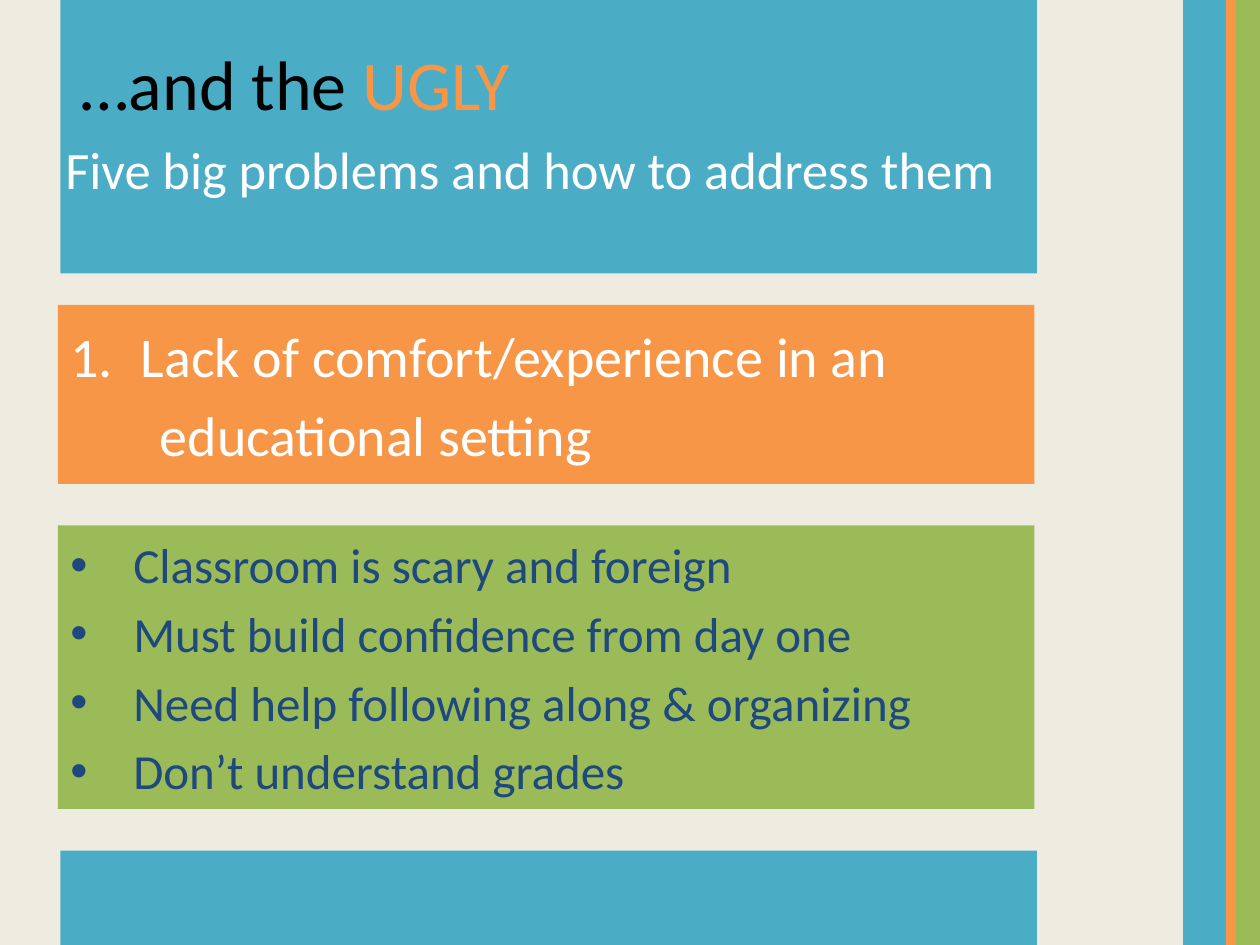
import pptx
import pptx.util
import pptx.dml.color
import pptx.enum.shapes
import pptx.enum.text
import pptx.oxml.ns
from lxml import etree

Inches, Pt = pptx.util.Inches, pptx.util.Pt
RGB = pptx.dml.color.RGBColor
MSO = pptx.enum.text
RECT = pptx.enum.shapes.MSO_SHAPE.RECTANGLE

TEAL = RGB(0x4B, 0xAC, 0xC6)
GREEN = RGB(0x9B, 0xBB, 0x59)
ORANGE = RGB(0xF7, 0x96, 0x46)
CREAM = RGB(0xEE, 0xEC, 0xE1)
NAVY = RGB(0x1F, 0x49, 0x7D)
WHITE = RGB(0xFF, 0xFF, 0xFF)
BLACK = RGB(0, 0, 0)

deck = pptx.Presentation()
deck.slide_width, deck.slide_height = Inches(10), Inches(7.5)
slide = deck.slides.add_slide(deck.slide_layouts[5])
slide.background.fill.solid()
slide.background.fill.fore_color.rgb = CREAM


def add_rect(left, top, width, height, color):
    box = slide.shapes.add_shape(
        RECT, Inches(left), Inches(top), Inches(width), Inches(height))
    box.shadow.inherit = False
    box.fill.solid()
    box.fill.fore_color.rgb = color
    box.line.fill.background()
    return box


def add_line(para, text, size, color, hang=0, start=0, mark=None):
    """Add a run; mark is a bullet tag with its attributes."""
    run = para.add_run()
    run.text = text
    looks = {"name": "Calibri", "size": Pt(size), "bold": False}
    for key, value in looks.items():
        setattr(run.font, key, value)
    run.font.color.rgb = color
    para.alignment = MSO.PP_ALIGN.LEFT
    props = para._p.get_or_add_pPr()
    props.set("marL", str(Inches(start)))
    props.set("indent", str(-Inches(hang)))
    if mark:
        tag, attrs = mark
        font = etree.SubElement(props, pptx.oxml.ns.qn("a:buFont"))
        font.set("typeface", "Arial" if tag == "a:buChar" else "+mj-lt")
        etree.SubElement(props, pptx.oxml.ns.qn(tag), attrs)


# Side stripes and the top and bottom bands
for left, width, color in [(9.39, 0.35, TEAL), (9.81, 0.19, GREEN),
                           (9.73, 0.08, ORANGE)]:
    add_rect(left, 0, width, 7.5, color)
for top, height in [(6.75, 0.75), (0, 2.17)]:
    add_rect(0.48, top, 7.75, height, TEAL)

# Problem and advice panels
dot = ("a:buChar", {"char": "•"})
count = ("a:buAutoNum", {"type": "arabicPeriod"})
advice = ["Classroom is scary and foreign",
          "Must build confidence from day one",
          "Need help following along & organizing",
          "Don’t understand grades"]
problem = [("Lack of comfort/experience in an", 0.56, 0.56, count),
           ("educational setting", 0, 0.71, None)]
panels = [
    (4.17, 2.25, GREEN, 28, NAVY, [(text, 0.5, 0.5, dot) for text in advice]),
    (2.42, 1.42, ORANGE, 32, WHITE, problem),
]
for top, height, fill, size, color, lines in panels:
    frame = add_rect(0.46, top, 7.75, height, fill).text_frame
    frame.vertical_anchor = MSO.MSO_ANCHOR.MIDDLE
    for i, (text, hang, start, mark) in enumerate(lines):
        para = frame.add_paragraph() if i else frame.paragraphs[0]
        para.space_before = Pt(size * 0.2)
        add_line(para, text, size, color, hang, start, mark)

# Subtitle
note = slide.shapes.add_textbox(
    Inches(0.42), Inches(1.04), Inches(8.5), Inches(0.61))
note.text_frame.word_wrap = True
para = note.text_frame.paragraphs[0]
para.space_before = Pt(6)
add_line(para, "Five big problems and how to address them", 30, WHITE)

# Title, raised above the top band
title = slide.shapes.title
place = {"left": 0.54, "top": 0.27, "width": 3.68, "height": 0.77}
for key, value in place.items():
    setattr(title, key, Inches(value))
frame = title.text_frame
frame.word_wrap = False
frame.auto_size = MSO.MSO_AUTO_SIZE.NONE
frame.vertical_anchor = MSO.MSO_ANCHOR.TOP
for text, color in [("…and the ", BLACK), ("UGLY", ORANGE)]:
    add_line(frame.paragraphs[0], text, 40, color)
title.element.getparent().append(title.element)

deck.save("out.pptx")
